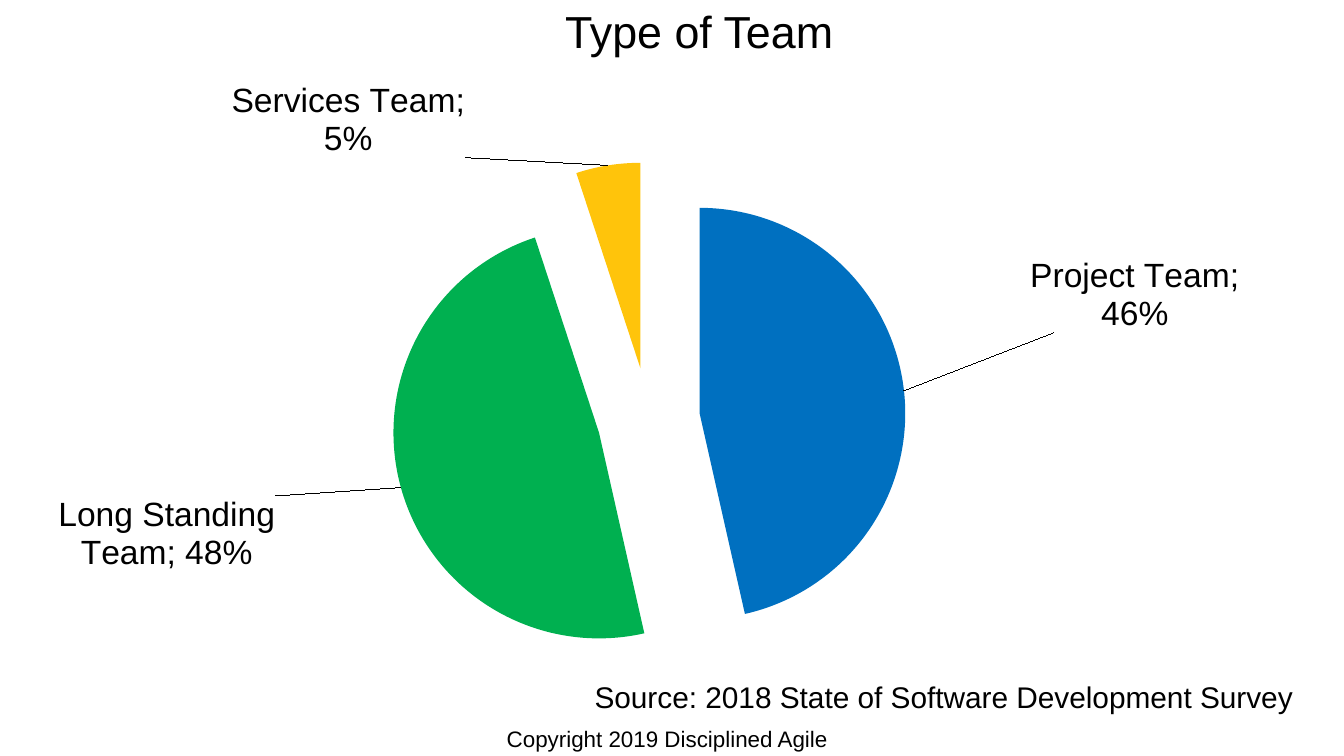
"""Build a slide with an exploded pie chart of team types."""
from dataclasses import dataclass

import lxml.etree
import pptx
import pptx.chart.data
import pptx.dml.color
import pptx.enum.chart
import pptx.enum.text
import pptx.oxml
import pptx.oxml.ns
import pptx.util

Pt = pptx.util.Pt
RGB = pptx.dml.color.RGBColor
Align = pptx.enum.text.PP_ALIGN
Anchor = pptx.enum.text.MSO_ANCHOR
qn = pptx.oxml.ns.qn


@dataclass(frozen=True)
class Theme:
    font: str = "Arial"
    ink: str = "000000"
    title: int = 24
    label: int = 18
    source: int = 16
    footer: int = 12


@dataclass(frozen=True)
class Box:
    left: float
    top: float
    width: float
    height: float

    def lengths(self) -> tuple:
        return Pt(self.left), Pt(self.top), Pt(self.width), Pt(self.height)


@dataclass(frozen=True)
class Slice:
    name: str
    share: float
    color: str
    label_dx: float
    label_dy: float


THEME = Theme()
EXPLOSION = 25
PLOT = Box(0.28, 0.16, 0.44, 0.81)
SLICES = [
    Slice("Project Team", 0.46, "0070C0", 0.12, -0.09),
    Slice("Long Standing Team", 0.48, "00B050", -0.1, 0.01),
    Slice("Services Team", 0.05, "FFC40B", -0.12, 0),
]


def style_font(font, size: int) -> None:
    font.name = THEME.font
    font.size = Pt(size)
    font.color.rgb = RGB.from_string(THEME.ink)


def write_text(sp, text: str, *, box: Box, size: int, align: Align, anchor: Anchor = Anchor.TOP) -> None:
    sp.left, sp.top, sp.width, sp.height = box.lengths()
    tf = sp.text_frame
    tf.word_wrap = True
    tf.auto_size = pptx.enum.text.MSO_AUTO_SIZE.NONE
    tf.vertical_anchor = anchor
    p = tf.paragraphs[0]
    p.alignment = align
    r = p.add_run()
    r.text = text
    style_font(r.font, size)


def chart_xml(tag: str, content: str = "", **attrs):
    values = "".join(f' {key}="{value}"' for key, value in attrs.items())
    return pptx.oxml.parse_xml(f'<c:{tag} {pptx.oxml.ns.nsdecls("c")}{values}>{content}</c:{tag}>')


def manual_layout(**values) -> str:
    parts = "".join(f'<c:{key} val="{value}"/>' for key, value in values.items())
    return f"<c:manualLayout>{parts}</c:manualLayout>"


def label_xml(index: int, item: Slice):
    layout = manual_layout(x=item.label_dx, y=item.label_dy)
    flags = {"LegendKey": 0, "Val": 1, "CatName": 1, "SerName": 0, "Percent": 0, "BubbleSize": 0}
    shows = "".join(f'<c:show{key} val="{value}"/>' for key, value in flags.items())
    return chart_xml(
        "dLbl",
        f'<c:idx val="{index}"/><c:layout>{layout}</c:layout><c:dLblPos val="outEnd"/>'
        f"{shows}<c:separator>; </c:separator>",
    )


def add_pie(s, box: Box) -> None:
    data = pptx.chart.data.CategoryChartData(number_format="0%")
    data.categories = [item.name for item in SLICES]
    data.add_series("Series 1", [item.share for item in SLICES])
    chart = s.shapes.add_chart(pptx.enum.chart.XL_CHART_TYPE.PIE, *box.lengths(), data).chart
    chart.has_title = False
    chart.has_legend = False
    style_font(chart.font, THEME.label)
    plot = chart.plots[0]
    plot.vary_by_categories = True

    series = plot.series[0]
    for i, item in enumerate(SLICES):
        fill = series.points[i].format.fill
        fill.solid()
        fill.fore_color.rgb = RGB.from_string(item.color)
    ser = series._element
    ser.find(qn("c:dPt")).addprevious(chart_xml("explosion", val=EXPLOSION))

    labels = series.data_labels
    labels.show_value = True
    labels.show_category_name = True
    labels.number_format = "0%"
    labels.number_format_is_linked = False
    labels.position = pptx.enum.chart.XL_LABEL_POSITION.OUTSIDE_END
    style_font(labels.font, THEME.label)
    group = ser.find(qn("c:dLbls"))
    for i, item in enumerate(SLICES):
        group.insert(i, label_xml(i, item))
    leader = group.find(qn("c:showLeaderLines"))
    if leader is None:
        leader = lxml.etree.SubElement(group, qn("c:showLeaderLines"))
    leader.set("val", "1")
    leader.addprevious(chart_xml("separator", "; "))

    area = chart._chartSpace.find(".//" + qn("c:plotArea"))
    for old in area.findall(qn("c:layout")):
        area.remove(old)
    inner = manual_layout(
        layoutTarget="inner", xMode="edge", yMode="edge",
        x=PLOT.left, y=PLOT.top, w=PLOT.width, h=PLOT.height,
    )
    area.insert(0, chart_xml("layout", inner))


def main() -> None:
    prs = pptx.Presentation()
    prs.slide_width, prs.slide_height = Pt(720), Pt(405)
    s = prs.slides.add_slide(prs.slide_layouts[5])
    write_text(s.shapes.title, "Type of Team", box=Box(65, 0, 619, 33),
               size=THEME.title, align=Align.CENTER, anchor=Anchor.MIDDLE)
    write_text(s.shapes.add_textbox(0, 0, 0, 0), "Copyright 2019 Disciplined Agile",
               box=Box(99.5, 385, 516, 12), size=THEME.footer, align=Align.CENTER)
    add_pie(s, Box(31, 32.5, 633, 340))
    write_text(s.shapes.add_textbox(0, 0, 0, 0), "Source: 2018 State of Software Development Survey",
               box=Box(252, 360, 448, 26.5), size=THEME.source, align=Align.RIGHT)
    prs.save("out.pptx")


if __name__ == "__main__":
    main()
